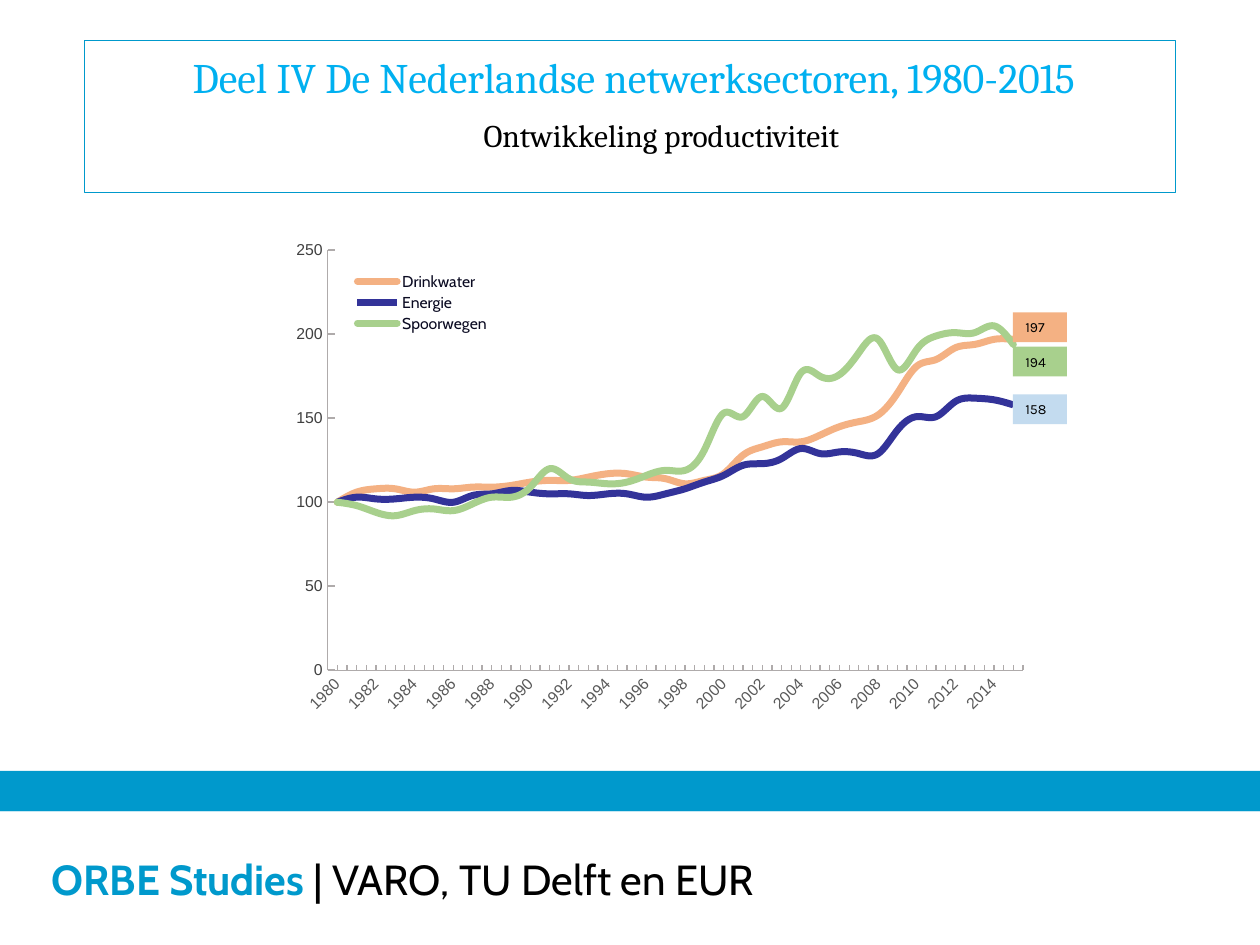
from dataclasses import dataclass

from lxml import etree
from pptx import Presentation
from pptx import util as u
from pptx.chart.data import CategoryChartData
from pptx.dml.color import RGBColor
from pptx.enum import chart as ch, shapes, text
from pptx.oxml.ns import qn


@dataclass(frozen=True)
class Theme:
    brand: str = "0099CC"
    head: str = "00B0F0"
    ink: str = "000000"
    paper: str = "FFFFFF"
    axis: str = "AFABAB"
    years: str = "595959"
    scale: str = "404040"
    key: str = "0B0B22"
    water: str = "F4B183"
    power: str = "333399"
    pale: str = "C3DBEF"
    rail: str = "A8D08D"
    serif: str = "Cambria"
    sans: str = "Cabin"
    body: str = "Karla"
    plain: str = "Arial"
    big: int = 24
    mid: int = 18
    small: int = 9
    tiny: int = 8


T = Theme()

# Index figures, 1980 = 100
YEARS = range(1980, 2016)
SERIES = [
    ("Drinkwater", T.water, "rnd",
     [100, 106, 108, 108, 106, 108, 108, 109, 109, 110, 112, 113,
      113, 115, 117, 117, 115, 114, 111, 113, 117, 128, 133, 136,
      136, 140, 145, 148, 152, 165, 181, 185, 192, 194, 197, 197]),
    ("Energie", T.power, "flat",
     [100, 103, 102, 102, 103, 102, 100, 104, 105, 107, 106, 105,
      105, 104, 105, 105, 103, 105, 108, 112, 116, 122, 123, 126,
      132, 129, 130, 129, 129, 143, 151, 151, 160, 162, 161, 158]),
    ("Spoorwegen", T.rail, "rnd",
     [100, 98, 94, 92, 95, 96, 95, 99, 103, 103, 109, 120,
      114, 112, 111, 112, 116, 119, 119, 131, 153, 151, 163, 156,
      177, 175, 176, 189, 197, 179, 191, 199, 201, 201, 205, 194]),
]
# End labels: text, fill, offset from the chart top in cm
ENDS = [("194", T.rail, 2.34), ("197", T.water, 1.65), ("158", T.pale, 3.3)]


def rgb(code):
    return RGBColor.from_string(code)


def style(font, name, size, color, bold=False):
    font.name, font.size, font.bold = name, u.Pt(size), bold
    font.color.rgb = rgb(color)


def add_run(para, words, *look):
    run = para.add_run()
    run.text = words
    style(run.font, *look)


def block(slide, box, fill):
    """Plain filled rectangle; box is left, top, width, height in cm."""
    shape = slide.shapes.add_shape(
        shapes.MSO_SHAPE.RECTANGLE, *map(u.Cm, box))
    shape.shadow.inherit = False
    shape.fill.solid()
    shape.fill.fore_color.rgb = rgb(fill)
    shape.line.fill.background()
    shape.text_frame.vertical_anchor = text.MSO_ANCHOR.MIDDLE
    shape.text_frame.paragraphs[0].alignment = text.PP_ALIGN.LEFT
    return shape


def place(parent, index, *rect):
    """Fix a chart part at x, y, w, h as shares of the chart."""
    for old in parent.findall(qn("c:layout")):
        parent.remove(old)
    layout = etree.Element(qn("c:layout"))
    manual = etree.SubElement(layout, qn("c:manualLayout"))
    if parent.tag == qn("c:plotArea"):
        etree.SubElement(manual, qn("c:layoutTarget")).set("val", "inner")
    for mode in ("xMode", "yMode"):
        etree.SubElement(manual, qn("c:" + mode)).set("val", "edge")
    for name, share in zip("xywh", rect):
        etree.SubElement(manual, qn("c:" + name)).set("val", str(share))
    parent.insert(index, layout)


def footer(slide, box):
    left, top, width, height = box
    bar = 0.82
    block(slide, (left, top, width, bar), T.brand)
    base = block(slide, (left, top + bar, width, height - bar), T.paper)
    base.text_frame.margin_left = u.Cm(1.04)
    para = base.text_frame.paragraphs[0]
    add_run(para, "ORBE Studies ", T.sans, T.big, T.brand, True)
    add_run(para, "| VARO, TU Delft en EUR", T.sans, T.big, T.ink)


def heading(slide, box):
    title = slide.shapes.title
    title.left, title.top, title.width, title.height = map(u.Cm, box)
    title.line.color.rgb = rgb(T.brand)
    title.line.width = u.Pt(0.75)
    frame = title.text_frame
    frame.auto_size = text.MSO_AUTO_SIZE.NONE
    frame.vertical_anchor = text.MSO_ANCHOR.TOP
    frame.margin_top = u.Cm(0.23)
    main, sub = frame.paragraphs[0], frame.add_paragraph()
    add_run(main, "Deel IV De Nederlandse netwerksectoren, 1980-2015",
            T.serif, T.big, T.head)
    add_run(sub, "Ontwikkeling productiviteit", T.serif, T.mid, T.ink)
    sub.space_before = u.Pt(8)
    for para, right in ((main, 1.12), (sub, 0)):
        para.alignment = text.PP_ALIGN.CENTER
        props = para._p.get_or_add_pPr()
        props.set("marL", str(u.Cm(1.27)))
        props.set("marR", str(u.Cm(right)))


def axes(chart):
    years, scale = chart.category_axis, chart.value_axis
    for axis, color, width in ((years, T.years, 0.75), (scale, T.scale, 1)):
        axis.has_major_gridlines = False
        axis.format.line.color.rgb = rgb(T.axis)
        axis.format.line.width = u.Pt(width)
        style(axis.tick_labels.font, T.plain, T.small, color)
    years.major_tick_mark = ch.XL_TICK_MARK.NONE
    years.minor_tick_mark = ch.XL_TICK_MARK.INSIDE
    years._element.find(qn("c:txPr")).find(qn("a:bodyPr")).set(
        "rot", "-2700000")
    skip = etree.Element(qn("c:tickLblSkip"))
    skip.set("val", "2")
    years._element.find(qn("c:noMultiLvlLbl")).addprevious(skip)
    scale.major_tick_mark = ch.XL_TICK_MARK.INSIDE
    scale.minimum_scale, scale.maximum_scale = 0, 250
    scale.major_unit = 50


def trend(slide, box):
    data = CategoryChartData(number_format="0")
    data.categories = [str(year) for year in YEARS]
    for name, _, _, vals in SERIES:
        data.add_series(name, vals)
    chart = slide.shapes.add_chart(
        ch.XL_CHART_TYPE.LINE, *map(u.Cm, box), data).chart
    style(chart.font, T.body, 10, T.ink)
    chart.has_title = False
    plot = chart.plots[0]
    plot.vary_by_categories = False
    for series, (_, color, cap, _) in zip(plot.series, SERIES):
        series.smooth = True
        line = series.format.line
        line.color.rgb = rgb(color)
        line.width = u.Pt(4)
        series._element.spPr.find(qn("a:ln")).set("cap", cap)
    axes(chart)

    # Legend inside the plot, top left
    chart.has_legend = True
    legend = chart.legend
    legend.position = ch.XL_LEGEND_POSITION.RIGHT
    legend.include_in_layout = False
    style(legend.font, T.sans, T.small, T.key)
    place(legend._element, 1, 0.09, 0.08, 0.19, 0.13)
    place(chart._chartSpace.chart.plotArea, 0, 0.06, 0.04, 0.92, 0.85)

    # Closing values beside the line ends
    left, top = box[:2]
    for words, fill, drop in ENDS:
        tag = block(slide, (left + 14.73, top + drop, 1.09, 0.6), fill)
        add_run(tag.text_frame.paragraphs[0], words, T.body, T.tiny, T.ink)


def main():
    deck = Presentation()
    deck.slide_width, deck.slide_height = u.Cm(25.4), u.Cm(19.05)
    slide = deck.slides.add_slide(deck.slide_layouts[5])
    footer(slide, (0, 15.54, 25.4, 3.51))
    heading(slide, (1.7, 0.81, 22, 3.07))
    trend(slide, (5.69, 4.65, 15.24, 9.96))
    deck.save("out.pptx")


if __name__ == "__main__":
    main()
